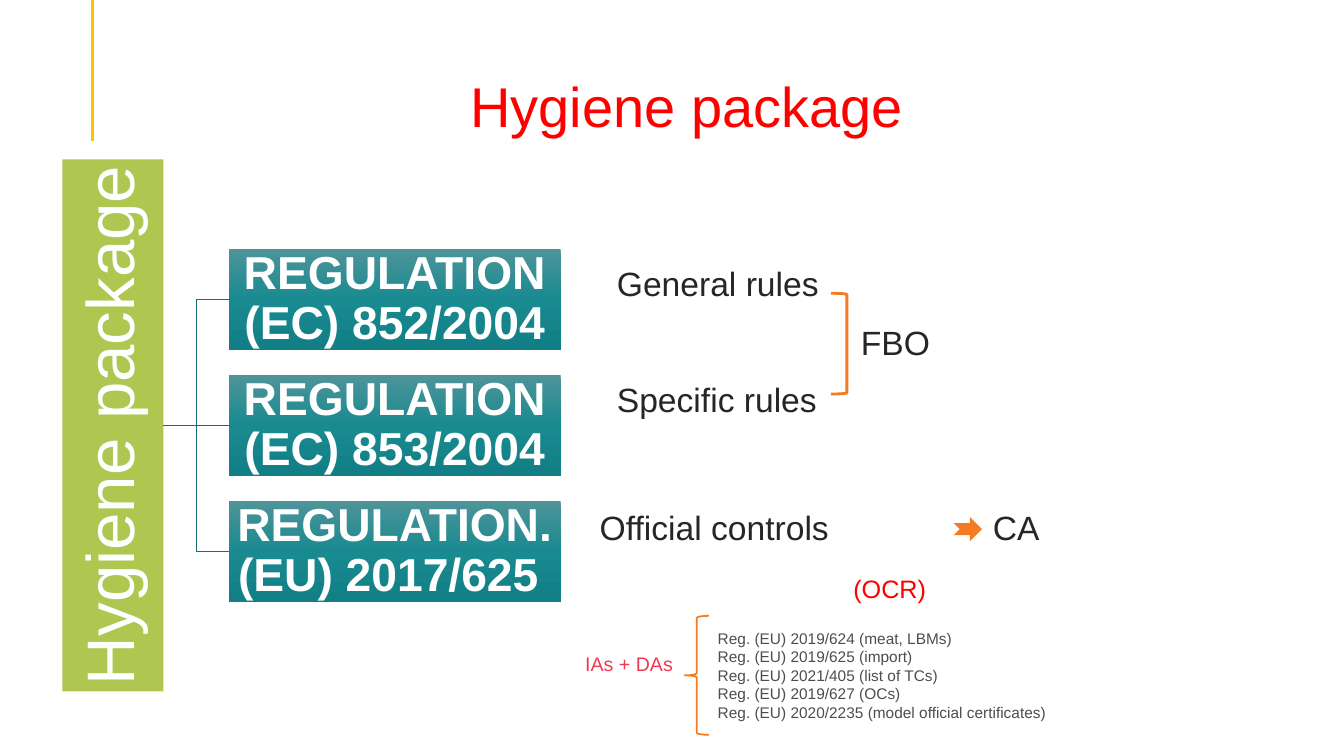
import copy

import pptx
import pptx.dml.color
import pptx.enum.shapes
import pptx.enum.text
import pptx.oxml.ns
import pptx.util

Inches = pptx.util.Inches
RGBColor = pptx.dml.color.RGBColor
Shape = pptx.enum.shapes.MSO_SHAPE
Connector = pptx.enum.shapes.MSO_CONNECTOR
Align = pptx.enum.text.PP_ALIGN
Anchor = pptx.enum.text.MSO_ANCHOR
AutoSize = pptx.enum.text.MSO_AUTO_SIZE
qn = pptx.oxml.ns.qn

RED = RGBColor(0xFF, 0x00, 0x00)
ROSE = RGBColor(0xF2, 0x39, 0x51)
GOLD = RGBColor(0xFF, 0xC0, 0x00)
GREEN = RGBColor(0xAF, 0xC6, 0x51)
ORANGE = RGBColor(0xF4, 0x7B, 0x22)
TEAL_LINE = RGBColor(0x18, 0x6B, 0x6F)
TEAL_GRADIENT = (
    RGBColor(0x4E, 0x94, 0x99),
    RGBColor(0x19, 0x8A, 0x90),
    RGBColor(0x11, 0x7F, 0x85),
)
WHITE = RGBColor(0xFF, 0xFF, 0xFF)
DARK = RGBColor(0x26, 0x26, 0x26)
GREY = RGBColor(0x4D, 0x4D, 0x4D)


class SlideBuilder:
    """Holds the style and the current slide."""

    font = "Arial"

    def __init__(self, page):
        self.page = page

    def add_lines(self, frame, lines, size, color, align=Align.LEFT, bold=False, spacing=None):
        for index, line in enumerate(lines):
            para = frame.paragraphs[0] if index == 0 else frame.add_paragraph()
            para.alignment = align
            para.line_spacing = spacing
            span = para.add_run()
            span.text = line
            span.font.name = self.font
            span.font.size = pptx.util.Pt(size)
            span.font.bold = bold
            span.font.color.rgb = color

    def inset(self, frame, margin):
        frame.margin_left = frame.margin_right = Inches(margin)
        frame.margin_top = frame.margin_bottom = Inches(margin)

    def title(self, text, left, top, width, height):
        box = self.page.shapes.title
        box.left, box.top = Inches(left), Inches(top)
        box.width, box.height = Inches(width), Inches(height)
        frame = box.text_frame
        frame.vertical_anchor = Anchor.BOTTOM
        frame.auto_size = AutoSize.NONE
        self.inset(frame, 0.05)
        frame.margin_left = frame.margin_right = Inches(0.1)
        frame.margin_bottom = 0
        self.add_lines(frame, [text], 40, RED, Align.CENTER, spacing=0.9)

    def label(self, lines, left, top, width, height, size=24, color=DARK,
              align=Align.LEFT, wrap=False):
        box = self.page.shapes.add_textbox(
            Inches(left), Inches(top), Inches(width), Inches(height))
        frame = box.text_frame
        frame.word_wrap = wrap
        frame.auto_size = AutoSize.SHAPE_TO_FIT_TEXT
        self.add_lines(frame, lines, size, color, align)

    def shape(self, kind, left, top, width, height, fill=None, line=None, weight=1):
        shape = self.page.shapes.add_shape(
            kind, Inches(left), Inches(top), Inches(width), Inches(height))
        shape.shadow.inherit = False
        if fill is None:
            shape.fill.background()
        else:
            shape.fill.solid()
            shape.fill.fore_color.rgb = fill
        if line is None:
            shape.line.fill.background()
        else:
            shape.line.color.rgb = line
            shape.line.width = pptx.util.Pt(weight)
        return shape

    def gradient(self, shape, colors):
        shape.fill.gradient()
        shape.fill.gradient_angle = 270
        # A new gradient has two stops; a copy of the first makes the third
        stops = shape.element.spPr.find(".//" + qn("a:gsLst"))
        stops.insert(1, copy.deepcopy(stops[0]))
        for index, (stop, color) in enumerate(zip(shape.fill.gradient_stops, colors)):
            stop.position = index / (len(colors) - 1)
            stop.color.rgb = color

    def block(self, text, left, top, width, height, fill, size, margin, bold=False):
        box = self.shape(Shape.RECTANGLE, left, top, width, height, fill)
        frame = box.text_frame
        frame.word_wrap = True
        frame.vertical_anchor = Anchor.MIDDLE
        self.inset(frame, margin)
        self.add_lines(frame, [text], size, WHITE, Align.CENTER, bold, 0.9)
        return box

    def line(self, kind, start, end, color, weight):
        points = [Inches(value) for value in (*start, *end)]
        line = self.page.shapes.add_connector(kind, *points)
        line.line.color.rgb = color
        line.line.width = pptx.util.Pt(weight)
        properties = line.element.spPr
        properties.append(properties.makeelement(qn("a:effectLst"), {}))


def main():
    deck = pptx.Presentation()
    deck.slide_width, deck.slide_height = Inches(13.33), Inches(7.5)
    slide = SlideBuilder(deck.slides.add_slide(deck.slide_layouts[5]))

    # Accent line and title
    slide.line(Connector.STRAIGHT, (0.92, 0), (0.92, 1.4), GOLD, 2.25)
    slide.title("Hygiene package", 1.06, 0.53, 11.5, 0.86)

    # Hierarchy: root bar, branches and regulations
    regulations = (
        "REGULATION (EC) 852/2004",
        "REGULATION (EC) 853/2004",
        "REGULATION. (EU) 2017/625 ",
    )
    root_right, box_left, middle, pitch = 1.62, 2.27, 4.22, 1.25
    root = slide.block("Hygiene package", -1.52, 3.72, 5.28, 1, GREEN, 48, 0.03)
    root.rotation = 270
    for index, regulation in enumerate(regulations):
        center = middle + (index - 1) * pitch
        kind = Connector.STRAIGHT if center == middle else Connector.ELBOW
        slide.line(kind, (root_right, middle), (box_left, center), TEAL_LINE, 0.5)
        box = slide.block(regulation, box_left, center - 0.5, 3.29, 1,
                          TEAL_GRADIENT[1], 33, 0.02, bold=True)
        slide.gradient(box, TEAL_GRADIENT)

    # Scope of each regulation and who it addresses
    for text, left, top, width in (
        ("General rules", 6.02, 2.56, 2.22),
        ("Specific rules", 6.02, 3.71, 2.21),
        ("Official controls", 5.85, 4.98, 2.5),
        ("FBO", 8.44, 3.14, 0.89),
        ("CA", 9.75, 4.98, 0.67),
    ):
        slide.label([text], left, top, width, 0.5)
    bracket = slide.shape(Shape.RIGHT_BRACKET, 8.24, 2.91, 0.16, 1, line=ORANGE, weight=2)
    bracket.adjustments[0] = 0.08
    slide.shape(Shape.NOTCHED_RIGHT_ARROW, 9.46, 5.13, 0.28, 0.24, fill=ORANGE)
    slide.label(["(OCR) "], 6.71, 5.64, 4.3, 0.4, 18, RED, Align.CENTER, wrap=True)

    # Implementing and delegated acts
    acts = (
        "Reg. (EU) 2019/624 (meat, LBMs)",
        "Reg. (EU) 2019/625 (import)",
        "Reg. (EU) 2021/405 (list of TCs)",
        "Reg. (EU) 2019/627 (OCs)",
        "Reg. (EU) 2020/2235 (model official certificates)",
    )
    slide.label(acts, 7.02, 6.19, 3.99, 1.03, 11, GREY, wrap=True)
    slide.label(["IAs + DAs"], 5.06, 6.42, 2.36, 0.34, 14, ROSE, Align.CENTER, wrap=True)
    slide.shape(Shape.LEFT_BRACE, 6.79, 6.11, 0.24, 1.18, line=ORANGE, weight=1.25)

    deck.save("out.pptx")


if __name__ == "__main__":
    main()
